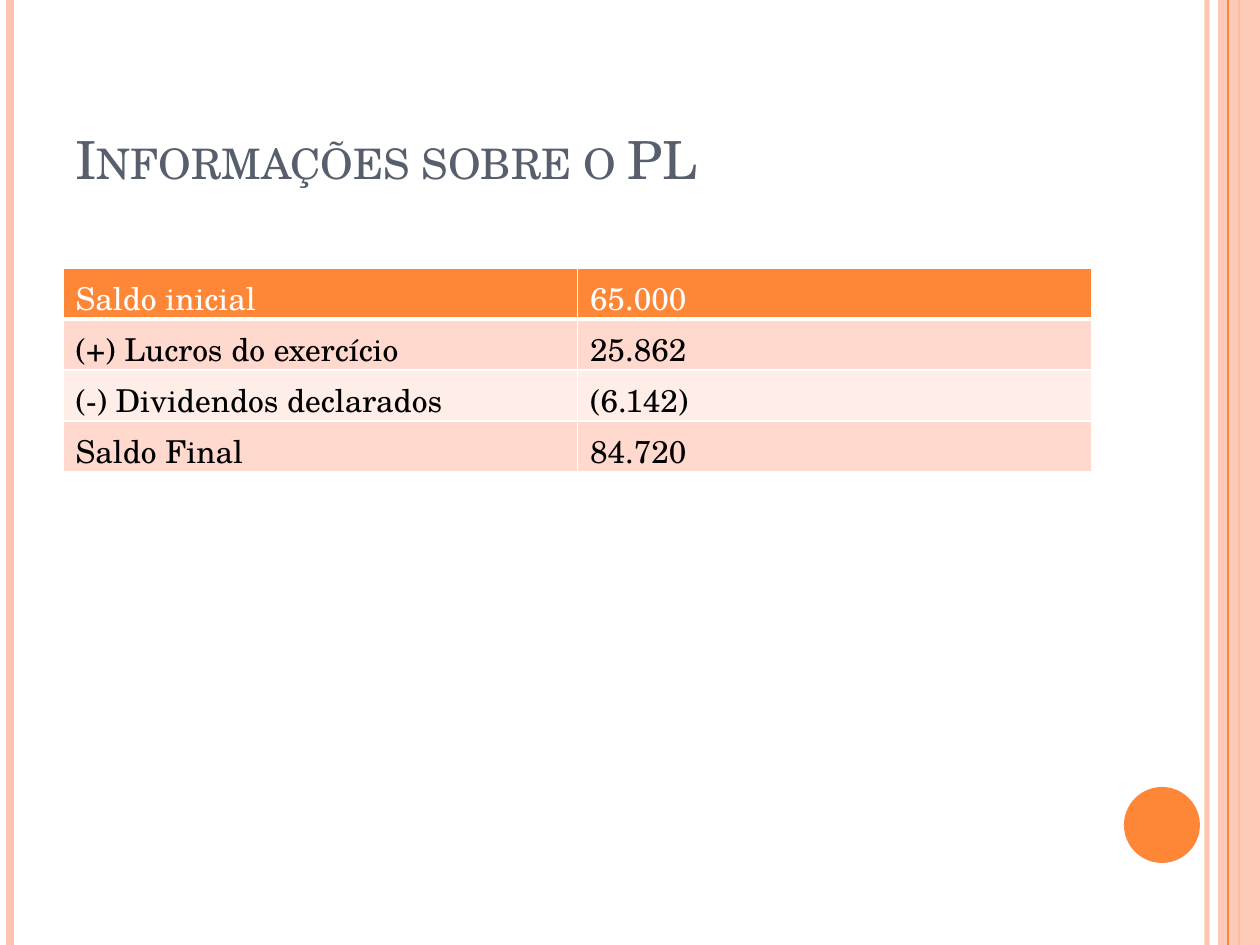
from lxml.etree import SubElement
from pptx import Presentation
from pptx.dml.color import RGBColor
from pptx.enum.shapes import MSO_CONNECTOR as CONN, MSO_SHAPE as SHAPE
from pptx.enum.text import MSO_ANCHOR as ANCHOR
from pptx.oxml.ns import qn
from pptx.util import Emu, Pt

FONT = "TeX Gyre Schola"
WHITE = RGBColor(0xFF, 0xFF, 0xFF)
BLACK = RGBColor(0, 0, 0)
SLATE = RGBColor(0x57, 0x5F, 0x6D)
ORANGE = RGBColor(0xFE, 0x86, 0x37)
PEACH = RGBColor(0xFE, 0xC3, 0xAE)
BANDS = [RGBColor(0xFF, 0xED, 0xE8), RGBColor(0xFF, 0xD9, 0xCE)]

WIDTH, HEIGHT = 1260, 945
ROWS = [
    ("Saldo inicial", "65.000"),
    ("(+) Lucros do exercício", "25.862"),
    ("(-) Dividendos declarados", "(6.142)"),
    ("Saldo Final", "84.720"),
]


def px(num):
    return Emu(round(num * 914400 / 126))


def fade(fill, alpha):
    """Set the opacity of a solid fill element, in percent."""
    color = fill.find(".//" + qn("a:srgbClr"))
    SubElement(color, qn("a:alpha"), val=str(alpha * 1000))


def style(frame, size, color):
    font = frame.paragraphs[0].runs[0].font
    font.name, font.size = FONT, Pt(size)
    font.color.rgb = color
    return font


def add_rule(slide, x, top, tall, color, width, alpha=100):
    rule = slide.shapes.add_connector(
        CONN.STRAIGHT, px(x), px(top), px(x), px(top + tall))
    rule.line.color.rgb = color
    rule.line.width = Pt(width)
    props = rule._element.spPr
    SubElement(props, qn("a:effectLst"))
    if alpha < 100:
        fade(props.find(qn("a:ln")), alpha)


def add_solid(slide, kind, box, color, alpha=100):
    shape = slide.shapes.add_shape(kind, *map(px, box))
    shape.shadow.inherit = False
    shape.fill.solid()
    shape.fill.fore_color.rgb = color
    shape.line.fill.background()
    if alpha < 100:
        fade(shape._element.spPr.find(qn("a:solidFill")), alpha)


def add_frame(slide, left, top, wide, tall):
    """Draw the stripes at both edges and the disc at the lower right."""
    right = left + wide
    add_rule(slide, right - 53, top, tall, PEACH, 3, 93)
    add_rule(slide, left + 10, top, tall, PEACH, 4.5)
    add_rule(slide, right - 21, top, tall, ORANGE, 1.5)
    add_solid(slide, SHAPE.RECTANGLE, (right - 42, top, 42, tall), PEACH, 87)
    add_rule(slide, right - 32, top, tall, ORANGE, 0.75)
    disc = (right - 136, top + tall - 158, 76, 76)
    add_solid(slide, SHAPE.OVAL, disc, ORANGE)


def add_title(slide, text, box):
    frame = slide.shapes.add_textbox(*map(px, box)).text_frame
    frame.word_wrap = True
    frame.vertical_anchor = ANCHOR.BOTTOM
    frame.text = text
    font = style(frame, 30, SLATE)
    font._element.set("cap", "small")


def add_edges(cell, head):
    props = cell._tc.get_or_add_tcPr()
    for side in "LRTB":
        width = 3 if head and side == "B" else 1
        edge = SubElement(props, qn("a:ln" + side), w=str(Pt(width)))
        fill = SubElement(edge, qn("a:solidFill"))
        SubElement(fill, qn("a:srgbClr"), val=str(WHITE))


def add_grid(slide, rows, box):
    table = slide.shapes.add_table(
        len(rows), len(rows[0]), *map(px, box)).table
    for r, row in enumerate(rows):
        head = r == 0
        for c, text in enumerate(row):
            cell = table.cell(r, c)
            add_edges(cell, head)
            cell.fill.solid()
            cell.fill.fore_color.rgb = ORANGE if head else BANDS[r % 2]
            cell.text_frame.text = text
            font = style(cell.text_frame, 18, WHITE if head else BLACK)
            font.bold = False


def main():
    deck = Presentation()
    deck.slide_width, deck.slide_height = px(WIDTH), px(HEIGHT)
    slide = deck.slides.add_slide(deck.slide_layouts[6])
    add_frame(slide, 0, 0, WIDTH, HEIGHT)
    add_title(slide, "Informações sobre o PL", (63, 38, 1029, 158))
    add_grid(slide, ROWS, (63, 268, 1029, 204))
    deck.save("out.pptx")


if __name__ == "__main__":
    main()
